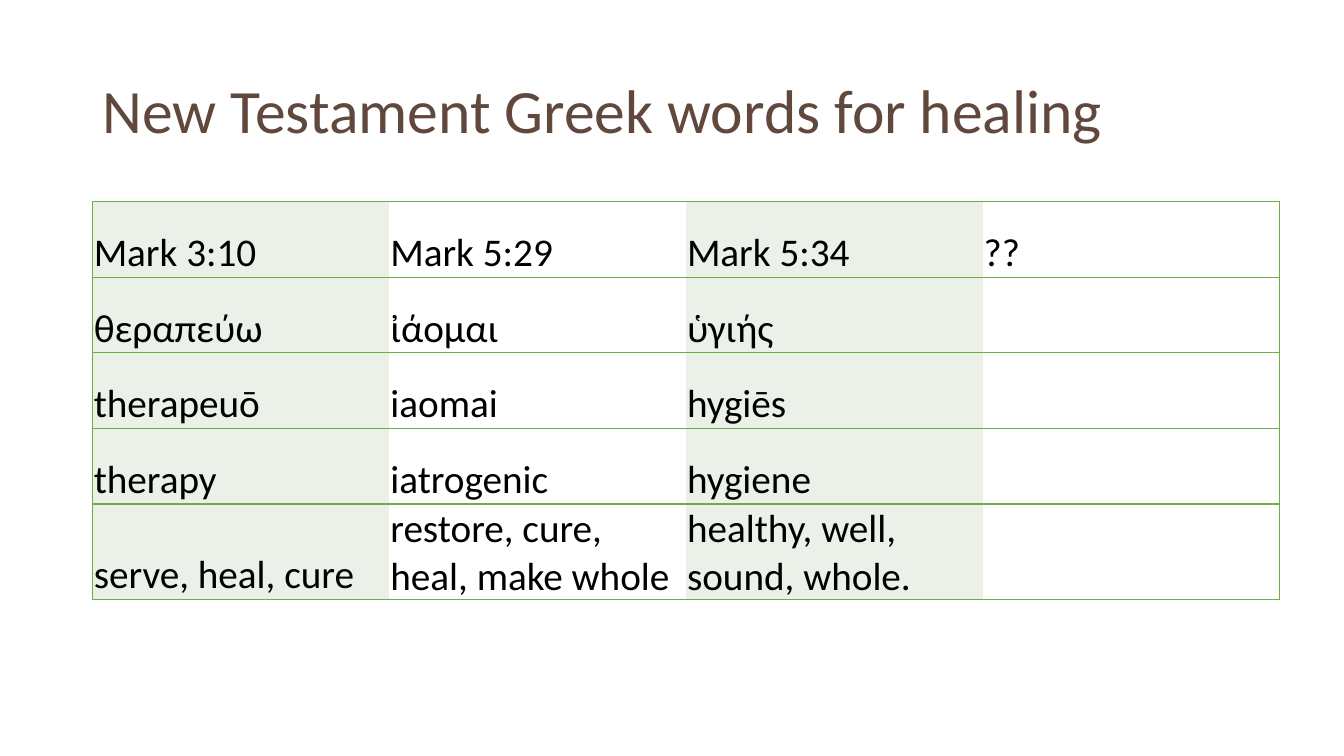
from dataclasses import dataclass

from lxml.etree import SubElement
from pptx import Presentation
from pptx.dml.color import RGBColor as Color
from pptx.enum.text import MSO_ANCHOR as Anchor
from pptx.oxml.ns import qn
from pptx.util import Pt

PX = 9144
WORDS = [
    ["Mark 3:10", "Mark 5:29", "Mark 5:34", "??"],
    ["θεραπεύω", "ἰάομαι", "ὑγιής", ""],
    ["therapeuō", "iaomai", "hygiēs", ""],
    ["therapy", "iatrogenic", "hygiene", ""],
    ["serve, heal, cure", "restore, cure, heal, make whole", "healthy, well, sound, whole.", ""],
]


@dataclass(frozen=True)
class Theme:
    """Colours and type of the slide."""
    font: str = "Calibri"
    title: str = "60483C"
    text: str = "000000"
    line: str = "70AD47"
    bands: tuple = ("EBF1E9", "FFFFFF")
    title_size: int = 44
    table_size: int = 28
    line_width: int = 1


THEME = Theme()


def px(*lengths):
    """Turn pixel lengths into EMU."""
    return [length * PX for length in lengths]


def style_text(para, size, colour):
    """Set the font of a whole paragraph."""
    font = para.font
    font.name, font.size = THEME.font, Pt(size)
    font.color.rgb = Color.from_string(colour)


def add_title(page, box, text):
    """Place the slide title, centred vertically in its box."""
    frame = page.shapes.add_textbox(*px(*box)).text_frame
    frame.word_wrap = True
    frame.vertical_anchor = Anchor.MIDDLE
    para = frame.paragraphs[0]
    para.text, para.line_spacing = text, 0.9
    style_text(para, THEME.title_size, THEME.title)


def set_borders(cell, visible):
    """Draw the visible sides of a cell and hide the others."""
    properties = cell._tc.get_or_add_tcPr()
    for side in "LRTB":
        line = SubElement(properties, qn(f"a:ln{side}"), w=str(Pt(THEME.line_width)))
        if side in visible:
            fill = SubElement(line, qn("a:solidFill"))
            SubElement(fill, qn("a:srgbClr"), val=THEME.line)
        else:
            SubElement(line, qn("a:noFill"))


def fill_cell(cell, text, band, sides):
    """Write and style one cell of the table."""
    set_borders(cell, sides)
    cell.fill.solid()
    cell.fill.fore_color.rgb = Color.from_string(band)
    cell.margin_left, cell.margin_right, cell.margin_top, cell.margin_bottom = px(1, 1, 1, 0)
    cell.vertical_anchor = Anchor.BOTTOM
    para = cell.text_frame.paragraphs[0]
    para.text = text
    style_text(para, THEME.table_size, THEME.text)


def add_word_table(page, box, rows):
    """Place the table of words with shaded alternate columns."""
    last = len(rows[0]) - 1
    table = page.shapes.add_table(len(rows), last + 1, *px(*box)).table
    table.first_row = table.horz_banding = False
    for row, texts in enumerate(rows):
        for column, text in enumerate(texts):
            sides = "TB" + "L" * (column == 0) + "R" * (column == last)
            band = THEME.bands[column % len(THEME.bands)]
            fill_cell(table.cell(row, column), text, band, sides)


def main():
    """Build the deck and save it."""
    deck = Presentation()
    deck.slide_width, deck.slide_height = px(1333, 750)
    page = deck.slides.add_slide(deck.slide_layouts[6])
    add_title(page, (92, 40, 1150, 145), "New Testament Greek words for healing")
    add_word_table(page, (92, 200, 1177, 375), WORDS)
    deck.save("out.pptx")


if __name__ == "__main__":
    main()
